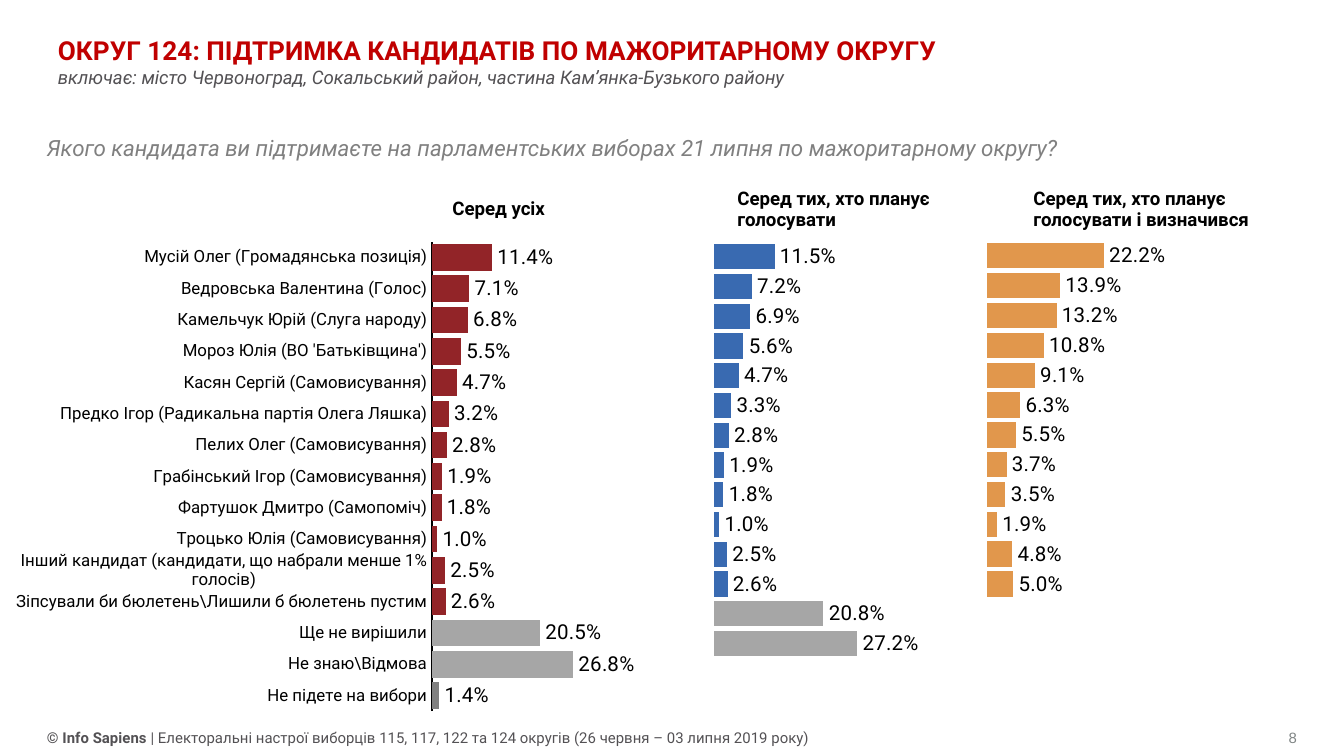
from dataclasses import dataclass, field

import pptx
import pptx.chart.data
import pptx.dml.color
import pptx.enum.chart
import pptx.enum.text
import pptx.oxml
import pptx.util

EMU_PER_PX = 914400 / 134.4
MIDDLE = pptx.enum.text.MSO_ANCHOR.MIDDLE
TOP = pptx.enum.text.MSO_ANCHOR.TOP


@dataclass(frozen=True)
class Theme:
    font: str = "Roboto"
    number_font: str = "Arial"
    black: str = "000000"
    title: str = "C00000"
    muted: str = "535154"
    question: str = "808080"
    page: str = "808585"
    everyone: str = "922428"
    voters: str = "396AB1"
    decided: str = "E1974C"
    undecided: str = "A6A6A6"
    absent: str = "808080"
    title_size: int = 14
    question_size: int = 12
    value_size: int = 11
    heading_size: int = 10
    candidate_size: int = 9
    footer_size: int = 8


THEME = Theme()


@dataclass(frozen=True)
class Box:
    left: int
    top: int
    width: int
    height: int


@dataclass(frozen=True)
class Span:
    text: str
    size: int
    color: str
    bold: bool = False
    italic: bool = False
    font: str = THEME.font


@dataclass(frozen=True)
class Caption:
    box: Box
    lines: list[list[Span]]
    anchor: pptx.enum.text.MSO_ANCHOR = MIDDLE
    align: pptx.enum.text.PP_ALIGN = pptx.enum.text.PP_ALIGN.LEFT


@dataclass(frozen=True)
class Poll:
    box: Box
    categories: list[str]
    percents: list[float]
    color: str
    plot_height: float
    greys: dict[int, str] = field(default_factory=dict)
    named: bool = False


def px(length: int) -> int:
    return round(length * EMU_PER_PX)


def place(box: Box) -> tuple[int, int, int, int]:
    return px(box.left), px(box.top), px(box.width), px(box.height)


def rgb(color: str) -> pptx.dml.color.RGBColor:
    return pptx.dml.color.RGBColor.from_string(color)


def style(font, size: int, color: str, name: str = THEME.font) -> None:
    font.size = pptx.util.Pt(size)
    font.name = name
    font.color.rgb = rgb(color)


def write(paragraph, span: Span) -> None:
    run = paragraph.add_run()
    run.text = span.text
    style(run.font, span.size, span.color, span.font)
    run.font.bold = span.bold
    run.font.italic = span.italic


def draw_caption(slide, caption: Caption) -> None:
    frame = slide.shapes.add_textbox(*place(caption.box)).text_frame
    frame.word_wrap = True
    frame.vertical_anchor = caption.anchor
    frame.margin_left = frame.margin_right = frame.margin_top = frame.margin_bottom = 0
    paragraph = frame.paragraphs[0]
    paragraph.alignment = caption.align
    for number, line in enumerate(caption.lines):
        if number:
            paragraph.add_line_break()
        for span in line:
            write(paragraph, span)


def draw_headings(slide, box: Box, headings: list[tuple[str, int]]) -> None:
    table = slide.shapes.add_table(1, len(headings), *place(box)).table
    table.first_row = False
    table.horz_banding = False
    for column, (heading, width) in enumerate(headings):
        table.columns[column].width = px(width)
        cell = table.cell(0, column)
        cell.fill.background()
        cell.vertical_anchor = MIDDLE
        write(cell.text_frame.paragraphs[0], Span(heading, THEME.heading_size, THEME.black, bold=True))


def set_plot_layout(chart, height: float) -> None:
    plot_area = chart.plots[0]._element.getparent()
    for layout in plot_area.findall(pptx.oxml.ns.qn("c:layout")):
        plot_area.remove(layout)
    values = [("x", 0.451), ("y", 0), ("w", 0.495), ("h", height)]
    sizes = "".join(f'<c:{key} val="{value}"/>' for key, value in values)
    plot_area.insert(0, pptx.oxml.parse_xml(
        f'<c:layout {pptx.oxml.ns.nsdecls("c")}><c:manualLayout><c:layoutTarget val="inner"/>'
        f'<c:xMode val="edge"/><c:yMode val="edge"/>{sizes}</c:manualLayout></c:layout>'))


def draw_poll(slide, poll: Poll) -> None:
    data = pptx.chart.data.CategoryChartData(number_format="0.0%")
    data.categories = poll.categories
    gaps = [None] * (len(poll.categories) - len(poll.percents))
    data.add_series("Series 1", [round(value / 100, 3) for value in poll.percents] + gaps)
    chart = slide.shapes.add_chart(
        pptx.enum.chart.XL_CHART_TYPE.BAR_CLUSTERED, *place(poll.box), data).chart
    chart.has_legend = False
    chart.has_title = False
    style(chart.font, THEME.value_size, THEME.black)
    set_plot_layout(chart, poll.plot_height)

    shares = chart.value_axis
    shares.minimum_scale, shares.maximum_scale = 0, 0.9
    shares.has_major_gridlines = False
    shares.visible = False
    candidates = chart.category_axis
    candidates.reverse_order = True
    candidates.visible = poll.named
    if poll.named:
        candidates.major_tick_mark = pptx.enum.chart.XL_TICK_MARK.NONE
        candidates.format.line.color.rgb = rgb(THEME.black)
        candidates.format.line.width = pptx.util.Pt(0.75)
        style(candidates.tick_labels.font, THEME.candidate_size, THEME.black)

    plot = chart.plots[0]
    plot.vary_by_categories = False
    plot.gap_width, plot.overlap = 18, -91
    plot.has_data_labels = True
    labels = plot.data_labels
    labels.show_value = True
    labels.number_format, labels.number_format_is_linked = "0.0%", False
    labels.position = pptx.enum.chart.XL_LABEL_POSITION.OUTSIDE_END
    style(labels.font, THEME.value_size, THEME.black)
    bars = plot.series[0]
    bars.invert_if_negative = False
    for part, color in [(bars, poll.color), *((bars.points[i], c) for i, c in poll.greys.items())]:
        part.format.fill.solid()
        part.format.fill.fore_color.rgb = rgb(color)


ANSWERS = [
    "Мусій Олег (Громадянська позиція)", "Ведровська Валентина (Голос)",
    "Камельчук Юрій (Слуга народу)", "Мороз Юлія (ВО 'Батьківщина')",
    "Касян Сергій (Самовисування)", "Предко Ігор (Радикальна партія Олега Ляшка)",
    "Пелих Олег (Самовисування)", "Грабінський Ігор (Самовисування)",
    "Фартушок Дмитро (Самопоміч)", "Троцько Юлія (Самовисування)",
    "Інший кандидат (кандидати, що набрали менше 1% голосів)",
    "Зіпсували би бюлетень\\Лишили б бюлетень пустим",
    "Ще не вирішили", "Не знаю\\Відмова", "Не підете на вибори",
]
ROWS = [str(row) for row in range(1, 17)]
UNDECIDED = {12: THEME.undecided, 13: THEME.undecided}
POLLS = [
    Poll(Box(282, 242, 958, 476), ROWS,
         [11.5, 7.2, 6.9, 5.6, 4.7, 3.3, 2.8, 1.9, 1.8, 1.0, 2.5, 2.6, 20.8, 27.2],
         THEME.voters, 1, UNDECIDED),
    Poll(Box(0, 241, 958, 480), ANSWERS,
         [11.4, 7.1, 6.8, 5.5, 4.7, 3.2, 2.8, 1.9, 1.8, 1.0, 2.5, 2.6, 20.5, 26.8, 1.4],
         THEME.everyone, 0.98, UNDECIDED | {14: THEME.absent}, named=True),
    Poll(Box(555, 241, 958, 519), ROWS,
         [22.2, 13.9, 13.2, 10.8, 9.1, 6.3, 5.5, 3.7, 3.5, 1.9, 4.8, 5.0],
         THEME.decided, 0.92),
]
HEADINGS = [("Серед усіх", 285), ("Серед тих, хто планує голосувати", 296),
            ("Серед тих, хто планує голосувати і визначився", 308)]
CAPTIONS = [
    Caption(Box(1106, 727, 191, 22),
            [[Span("8", THEME.footer_size, THEME.page, font=THEME.number_font)]],
            align=pptx.enum.text.PP_ALIGN.RIGHT),
    Caption(Box(47, 727, 1038, 22), [[
        Span("© ", THEME.footer_size, THEME.muted, bold=True),
        Span("Info Sapіens ", THEME.footer_size, THEME.muted, bold=True),
        Span("| Електоральні настрої виборців 115, 117, 122 та 124 округів "
             "(26 червня – 03 липня 2019 року)", THEME.footer_size, THEME.muted)]]),
    Caption(Box(58, 22, 1059, 78), [
        [Span("ОКРУГ 124: ПІДТРИМКА КАНДИДАТІВ ПО МАЖОРИТАРНОМУ ОКРУГУ",
              THEME.title_size, THEME.title, bold=True)],
        [Span("включає: місто Червоноград, Сокальський район, частина Кам’янка-Бузького району",
              THEME.heading_size, THEME.muted, italic=True)]]),
    Caption(Box(47, 134, 1079, 27), [[
        Span("Якого кандидата ви підтримаєте на парламентських виборах 21 липня по мажоритарному округу?",
             THEME.question_size, THEME.question, italic=True)]], anchor=TOP),
]


def main() -> None:
    deck = pptx.Presentation()
    deck.slide_width, deck.slide_height = px(1344), px(756)
    slide = deck.slides.add_slide(deck.slide_layouts[6])
    for poll in POLLS:
        draw_poll(slide, poll)
    draw_headings(slide, Box(439, 181, 889, 55), HEADINGS)
    for caption in CAPTIONS:
        draw_caption(slide, caption)
    deck.save("out.pptx")


if __name__ == "__main__":
    main()
